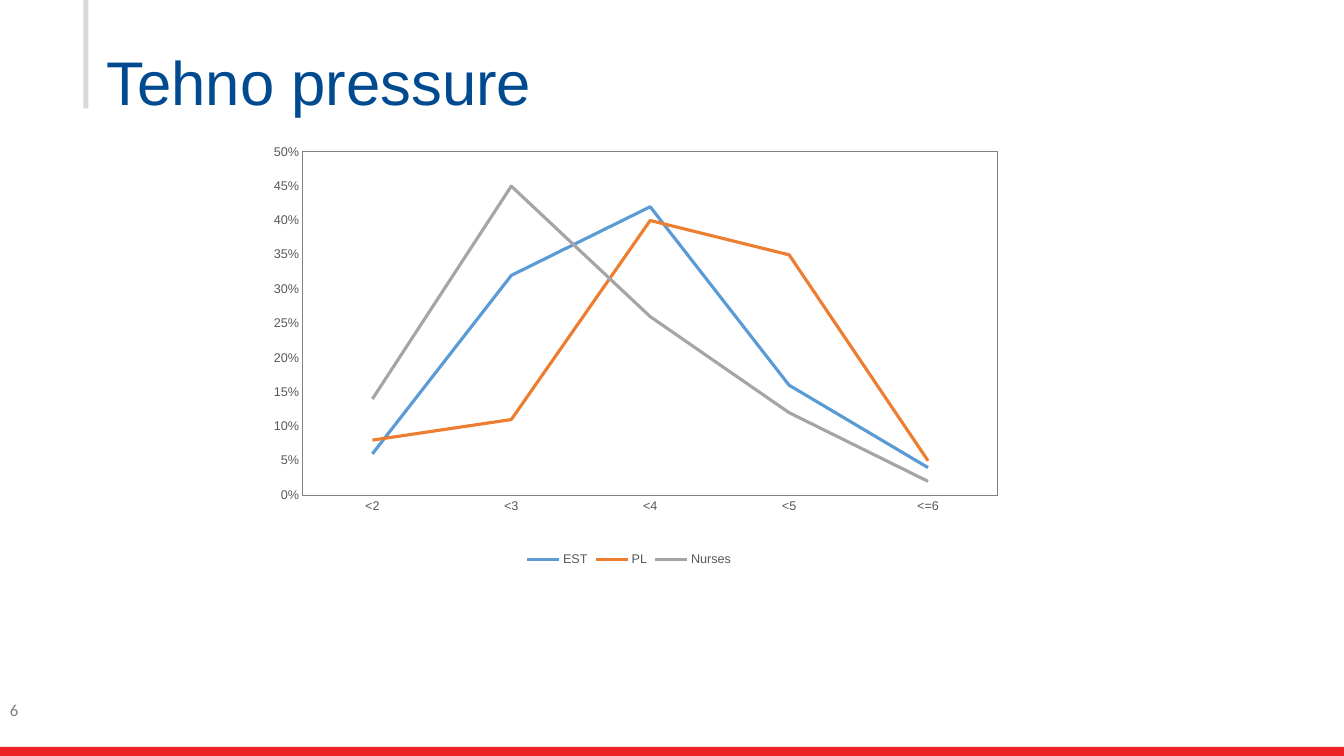
import pptx
import pptx.chart.data
import pptx.dml.color
import pptx.enum.chart
import pptx.enum.shapes
import pptx.enum.text
import pptx.oxml
import pptx.util
from pptx.util import Pt

AXIS_TEXT = "595959"
FRAME = "808080"
CATEGORIES = ["<2", "<3", "<4", "<5", "<=6"]
GROUPS = [
    ("EST", "5B9BD5", [0.06, 0.32, 0.42, 0.16, 0.04]),
    ("PL", "ED7D31", [0.08, 0.11, 0.40, 0.35, 0.05]),
    ("Nurses", "A5A5A5", [0.14, 0.45, 0.26, 0.12, 0.02]),
]
CHART_NS = 'xmlns:c="http://schemas.openxmlformats.org/drawingml/2006/chart"'
DRAWING_NS = 'xmlns:a="http://schemas.openxmlformats.org/drawingml/2006/main"'


def color(value):
    return pptx.dml.color.RGBColor.from_string(value)


def style_font(font, name, size, fill):
    font.name = name
    font.size = Pt(size)
    font.color.rgb = color(fill)


def add_bar(slide, left, top, width, height, fill):
    bar = slide.shapes.add_shape(
        pptx.enum.shapes.MSO_SHAPE.RECTANGLE, Pt(left), Pt(top), Pt(width), Pt(height))
    bar.shadow.inherit = False
    bar.fill.solid()
    bar.fill.fore_color.rgb = color(fill)
    bar.line.fill.background()


def write_text(frame, text, font_name, size, fill):
    frame.word_wrap = True
    frame.auto_size = pptx.enum.text.MSO_AUTO_SIZE.NONE
    frame.vertical_anchor = pptx.enum.text.MSO_ANCHOR.TOP
    paragraph = frame.paragraphs[0]
    paragraph.alignment = pptx.enum.text.PP_ALIGN.LEFT
    run = paragraph.add_run()
    run.text = text
    style_font(run.font, font_name, size, fill)


def set_title(slide, text):
    title = slide.shapes.title
    title.left, title.top, title.width, title.height = Pt(69), Pt(30.2), Pt(828), Pt(72.7)
    write_text(title.text_frame, text, "Arial", 44, "004A8F")
    title.text_frame.margin_top = Pt(7.2)
    title.text_frame.paragraphs[0].line_spacing = 0.9


def add_page_number(slide, number):
    box = slide.shapes.add_textbox(Pt(0), Pt(496), Pt(216), Pt(28.8))
    write_text(box.text_frame, number, "Calibri", 12, "808080")


def frame_plot(chart):
    """Fix the inner plot area and outline it."""
    plot_area = chart.plots[0]._element.getparent()
    for old_layout in plot_area.findall(pptx.oxml.ns.qn("c:layout")):
        plot_area.remove(old_layout)
    places = "".join(f'<c:{tag} val="{value}"/>' for tag, value in [
        ("layoutTarget", "inner"), ("xMode", "edge"), ("yMode", "edge"),
        ("x", 0.08), ("y", 0.018), ("w", 0.894), ("h", 0.805)])
    plot_area.insert(0, pptx.oxml.parse_xml(
        f"<c:layout {CHART_NS}><c:manualLayout>{places}</c:manualLayout></c:layout>"))
    plot_area.append(pptx.oxml.parse_xml(
        f'<c:spPr {CHART_NS} {DRAWING_NS}><a:noFill/><a:ln w="{Pt(0.75)}">'
        f'<a:solidFill><a:srgbClr val="{FRAME}"/></a:solidFill></a:ln></c:spPr>'))


def style_axis(axis):
    axis.has_major_gridlines = False
    axis.major_tick_mark = pptx.enum.chart.XL_TICK_MARK.NONE
    axis.minor_tick_mark = pptx.enum.chart.XL_TICK_MARK.NONE
    style_font(axis.tick_labels.font, "Arial", 9, AXIS_TEXT)


def add_pressure_chart(slide):
    data = pptx.chart.data.CategoryChartData(number_format="0%")
    data.categories = CATEGORIES
    for name, _, shares in GROUPS:
        data.add_series(name, shares)
    chart = slide.shapes.add_chart(
        pptx.enum.chart.XL_CHART_TYPE.LINE,
        Pt(172), Pt(103), Pt(555), Pt(304.6), data).chart
    style_font(chart.font, "Arial", 10, "000000")
    chart.has_title = False
    chart.plots[0].vary_by_categories = False

    for series, (_, stroke, _) in zip(chart.plots[0].series, GROUPS):
        series.smooth = False
        series.marker.style = pptx.enum.chart.XL_MARKER_STYLE.NONE
        series.format.line.width = Pt(2.25)
        series.format.line.color.rgb = color(stroke)

    style_axis(chart.category_axis)
    chart.category_axis.format.line.width = Pt(0.75)
    chart.category_axis.format.line.color.rgb = color(FRAME)

    shares_axis = chart.value_axis
    style_axis(shares_axis)
    shares_axis.format.line.fill.background()
    shares_axis.minimum_scale = 0
    shares_axis.maximum_scale = 0.5
    shares_axis.major_unit = 0.05
    shares_axis.tick_labels.number_format = "0%"
    shares_axis.tick_labels.number_format_is_linked = False

    chart.has_legend = True
    chart.legend.position = pptx.enum.chart.XL_LEGEND_POSITION.BOTTOM
    chart.legend.include_in_layout = False
    style_font(chart.legend.font, "Arial", 9, AXIS_TEXT)
    frame_plot(chart)


def main():
    deck = pptx.Presentation()
    deck.slide_width, deck.slide_height = Pt(960), Pt(540)
    slide = deck.slides.add_slide(deck.slide_layouts.get_by_name("Title Only"))
    add_bar(slide, 0, 533.5, 960, 6.5, "EC2227")
    add_bar(slide, 59.5, 0, 3.6, 77.5, "D6D8D9")
    set_title(slide, "Tehno pressure")
    add_page_number(slide, "6")
    add_pressure_chart(slide)
    deck.save("out.pptx")


if __name__ == "__main__":
    main()
